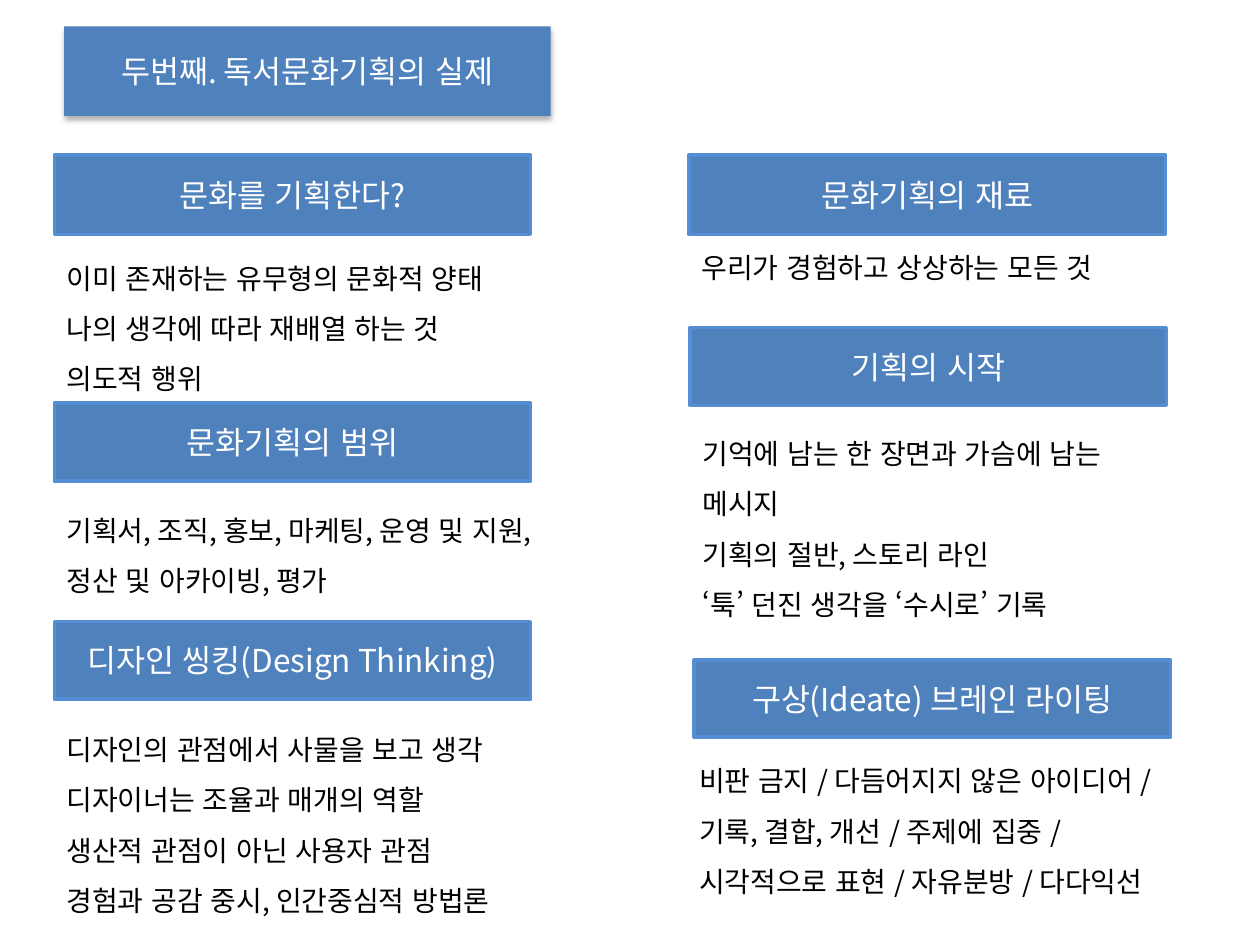
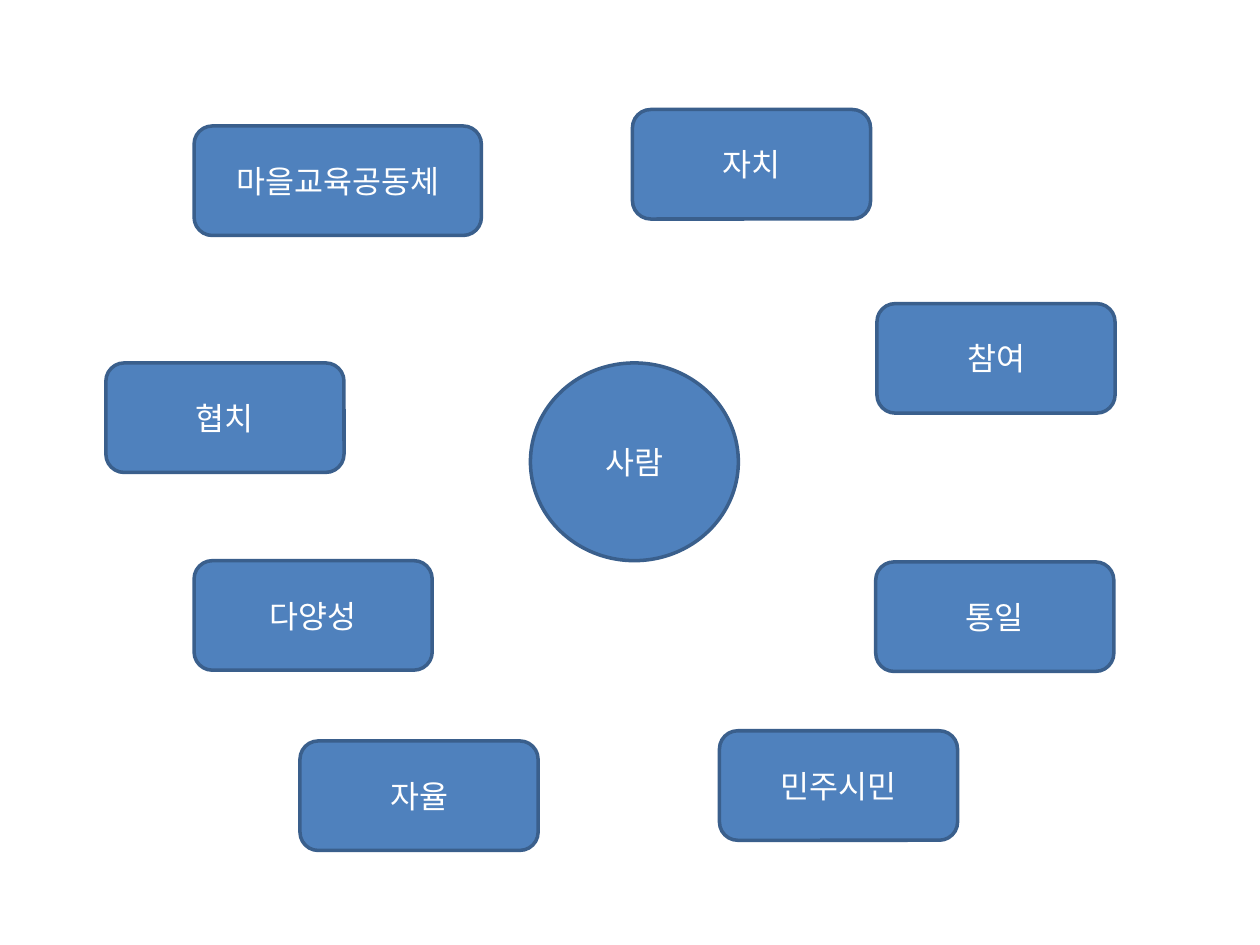
"""Build two slides on planning reading culture."""
from lxml import etree
from pptx import Presentation
from pptx.dml.color import RGBColor
from pptx.enum.lang import MSO_LANGUAGE_ID
from pptx.enum.shapes import MSO_SHAPE
from pptx.enum.text import MSO_ANCHOR, MSO_AUTO_SIZE, PP_ALIGN
from pptx.oxml import parse_xml
from pptx.oxml.ns import nsdecls, qn
from pptx.util import Pt

RECT, ROUND, OVAL = MSO_SHAPE.RECTANGLE, MSO_SHAPE.ROUNDED_RECTANGLE, MSO_SHAPE.OVAL
CENTER, LEFT = PP_ALIGN.CENTER, PP_ALIGN.LEFT
MIDDLE, TOP = MSO_ANCHOR.MIDDLE, MSO_ANCHOR.TOP
FIXED, GROW = MSO_AUTO_SIZE.NONE, MSO_AUTO_SIZE.SHAPE_TO_FIT_TEXT
KOREAN = MSO_LANGUAGE_ID.KOREAN

FONT = "Noto Sans CJK KR"
COLORS = {
    "fill": "4F81BD",
    "bar": "558ED5",
    "edge": "3A5F8C",
    "light": "FFFFFF",
    "dark": "000000",
}
TITLE_ONLY, BLANK = 5, 6
BAR_W, NODE_W, NODE_H = 272.2, 136.1, 62.6
COL_A, COL_B = 31, 393.8

TOPICS = [
    ("문화를 기획한다?", (COL_A, 88.6, BAR_W, 45.4),
     ["이미 존재하는 유무형의 문화적 양태", "나의 생각에 따라 재배열 하는 것", "의도적 행위"],
     (COL_A, 136.1, 283.7, 94.3), 1.5),
    ("문화기획의 재료", (COL_B, 88.6, BAR_W, 45.4),
     ["우리가 경험하고 상상하는 모든 것"],
     (COL_B, 139.7, BAR_W, 26.6), 1),
    ("문화기획의 범위", (COL_A, 230.4, BAR_W, 44.6),
     ["기획서, 조직, 홍보, 마케팅, 운영 및 지원, 정산 및 아카이빙, 평가"],
     (COL_A, 280.1, 306, 65.5), 1.5),
    ("기획의 시작", (394.4, 187.2, BAR_W, 44.6),
     ["기억에 남는 한 장면과 가슴에 남는 메시지", "기획의 절반, 스토리 라인",
      "‘툭’ 던진 생각을 ‘수시로’ 기록"],
     (394.4, 236.2, BAR_W, 123.8), 1.5),
    ("디자인 씽킹(Design Thinking)", (COL_A, 355, BAR_W, 44.6),
     ["디자인의 관점에서 사물을 보고 생각", "디자이너는 조율과 매개의 역할",
      "생산적 관점이 아닌 사용자 관점", "경험과 공감 중시, 인간중심적 방법론"],
     (COL_A, 405.4, 283.7, 123.8), 1.5),
    ("구상(Ideate) 브레인 라이팅", (396.7, 377.3, BAR_W, 43.9),
     ["비판 금지 / 다듬어지지 않은 아이디어 / 기록, 결합, 개선 / 주제에 집중 / "
      "시각적으로 표현 / 자유분방 / 다다익선"],
     (392.4, 423.4, 292.3, 94.3), 1.5),
]

VALUES = [
    ("마을교육공동체", 110.9, 72, 164.2),
    ("민주시민", 411.1, 417.6, NODE_W),
    ("참여", 501.1, 173.5, NODE_W),
    ("협치", 60.5, 207.4, NODE_W),
    ("자치", 361.4, 62.6, NODE_W),
    ("통일", 500.4, 321.1, NODE_W),
    ("다양성", 110.9, 320.4, NODE_W),
    ("자율", 171.4, 423.4, NODE_W),
]


class Deck:
    def __init__(self):
        self.prs = Presentation()
        self.prs.slide_width, self.prs.slide_height = Pt(720), Pt(540)
        self.slide = None

    def add(self, layout):
        self.slide = self.prs.slides.add_slide(self.prs.slide_layouts[layout])

    def paint(self, shape):
        shape.fill.solid()
        shape.fill.fore_color.rgb = RGBColor.from_string(COLORS["fill"])

    def set_text(self, shape, lines, size, color, align, anchor, fit, space=1):
        frame = shape.text_frame
        frame.word_wrap = True
        frame.auto_size = fit
        frame.vertical_anchor = anchor
        frame.text = "\n".join(lines)
        for para in frame.paragraphs:
            para.alignment = align
            para.line_spacing = space
            font = para.font
            font.size = Pt(size)
            font.language_id = KOREAN
            font.color.rgb = RGBColor.from_string(COLORS[color])
            font.name = FONT
            props = para._p.pPr.find(qn("a:defRPr"))
            etree.SubElement(props, qn("a:ea")).set("typeface", FONT)

    def label(self, shape, text):
        self.set_text(shape, [text], 18, "light", CENTER, MIDDLE, FIXED)

    def title(self, text, box):
        shape = self.slide.shapes.title
        shape.left, shape.top, shape.width, shape.height = map(Pt, box)
        props = shape.element.spPr
        props.append(parse_xml(
            f'<a:prstGeom {nsdecls("a")} prst="roundRect"><a:avLst/></a:prstGeom>'))
        self.paint(shape)
        props.append(parse_xml(
            f'<a:effectLst {nsdecls("a")}><a:outerShdw blurRad="{Pt(3.5)}" '
            f'dist="{Pt(2.2)}" dir="5400000" rotWithShape="0">'
            f'<a:srgbClr val="{COLORS["dark"]}"><a:alpha val="32000"/></a:srgbClr>'
            '</a:outerShdw></a:effectLst>'))
        self.label(shape, text)

    def block(self, kind, text, box, edge):
        shape = self.slide.shapes.add_shape(kind, *map(Pt, box))
        shape.shadow.inherit = False
        self.paint(shape)
        shape.line.color.rgb = RGBColor.from_string(COLORS[edge])
        shape.line.width = Pt(2)
        self.label(shape, text)

    def body(self, lines, box, space):
        shape = self.slide.shapes.add_textbox(*map(Pt, box))
        self.set_text(shape, lines, 16, "dark", LEFT, TOP, GROW, space)


def main():
    deck = Deck()

    deck.add(TITLE_ONLY)
    deck.title("두번째. 독서문화기획의 실제", (36.7, 15.1, 277.9, 51.1))
    for head, bar, lines, box, space in TOPICS:
        deck.block(RECT, head, bar, "bar")
        deck.body(lines, box, space)

    deck.add(BLANK)
    deck.block(OVAL, "사람", (303.1, 207.4, 118.8, 113), "edge")
    for text, left, top, width in VALUES:
        deck.block(ROUND, text, (left, top, width, NODE_H), "edge")

    deck.prs.save("out.pptx")


if __name__ == "__main__":
    main()
